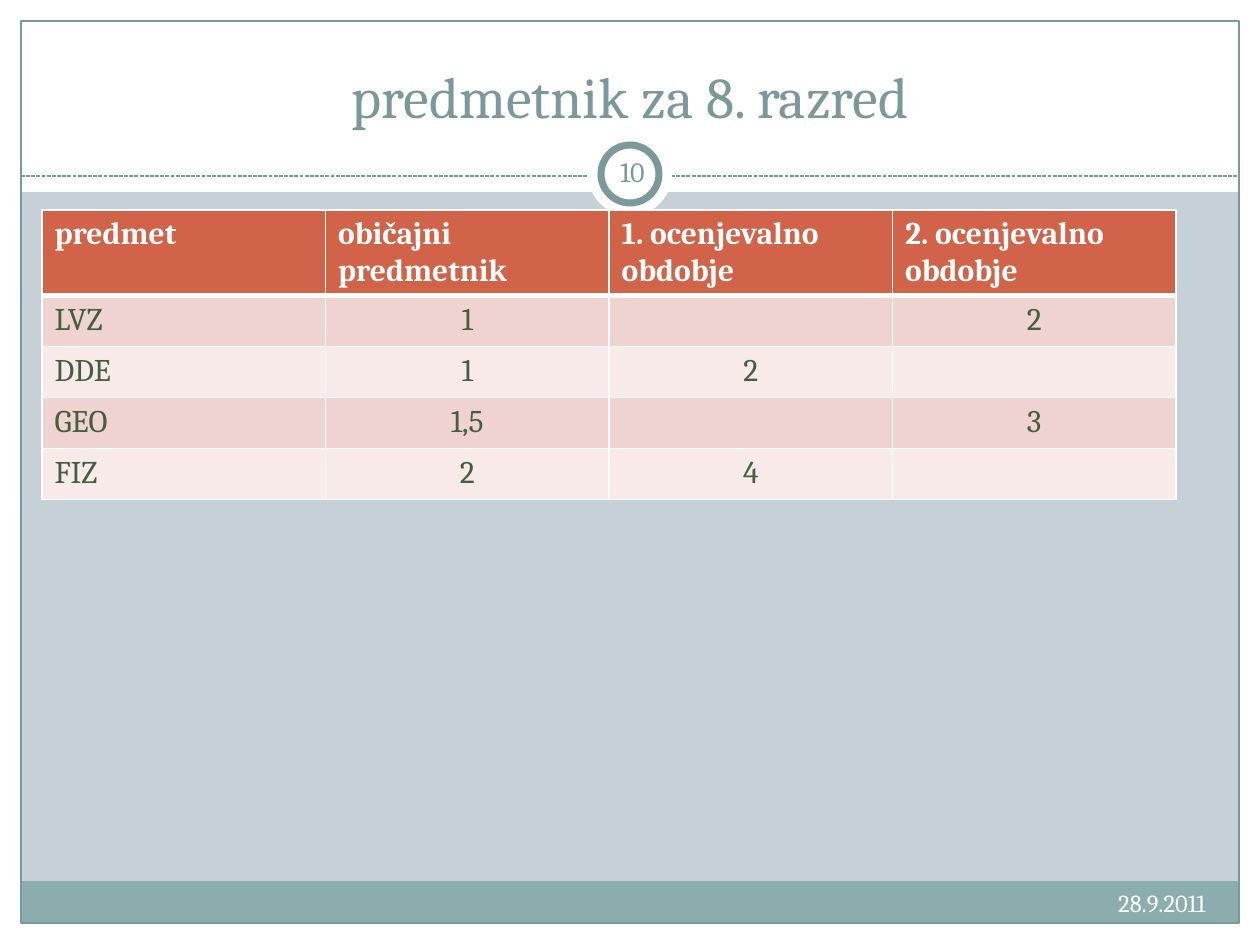
"""Build the timetable slide for the 8th grade."""
from lxml.etree import SubElement
from pptx import Presentation
from pptx.dml.color import RGBColor
from pptx.enum.dml import MSO_LINE
from pptx.enum.shapes import MSO_CONNECTOR, MSO_SHAPE
from pptx.enum.text import MSO_ANCHOR, MSO_AUTO_SIZE, PP_ALIGN
from pptx.oxml.ns import qn
from pptx.util import Emu, Pt

TITLE = "predmetnik za 8. razred"
DATE = "28.9.2011"
PAGE_NUMBER = "10"
HEADINGS = ["predmet", "običajni predmetnik", "1. ocenjevalno obdobje", "2. ocenjevalno obdobje"]
SUBJECTS = [
    ["LVZ", "1", "", "2"],
    ["DDE", "1", "2", ""],
    ["GEO", "1,5", "", "3"],
    ["FIZ", "2", "4", ""],
]

FONT = "Cambria"
WHITE = RGBColor(0xFF, 0xFF, 0xFF)
BACKDROP = RGBColor(0xC5, 0xD1, 0xD7)
TEAL = RGBColor(0x7C, 0x99, 0x9A)
FOOTER_TEAL = RGBColor(0x8C, 0xAD, 0xAE)
HEADER_RED = RGBColor(0xD1, 0x63, 0x49)
BANDS = [RGBColor(0xEE, 0xD3, 0xD0), RGBColor(0xF7, 0xEA, 0xE9)]
GREEN = RGBColor(0x43, 0x5E, 0x40)

WIDTH, HEIGHT, MARGIN = 1260, 945, 21
TABLE_LEFT, TABLE_TOP = 42, 210
COLUMN_WIDTH, HEADER_HEIGHT, ROW_HEIGHT = 283.5, 84, 51
DIVIDER_Y = 176


def px(length):
    return Emu(round(length * 914400 / 126))


def add_plain(slide, box, fill=None, line=None, weight=0.75, kind=MSO_SHAPE.RECTANGLE):
    shape = slide.shapes.add_shape(kind, *map(px, box))
    shape.shadow.inherit = False
    if fill is None:
        shape.fill.background()
    else:
        shape.fill.solid()
        shape.fill.fore_color.rgb = fill
    if line is None:
        shape.line.fill.background()
    else:
        shape.line.color.rgb = line
        shape.line.width = Pt(weight)


def format_text(frame, size, color, align, bold=False):
    paragraph = frame.paragraphs[0]
    paragraph.alignment = align
    paragraph.font.name = FONT
    paragraph.font.size = Pt(size)
    paragraph.font.bold = bold
    paragraph.font.color.rgb = color


def add_label(slide, box, text, size, color, align, anchor, inset=None):
    frame = slide.shapes.add_textbox(*map(px, box)).text_frame
    frame.word_wrap = True
    frame.vertical_anchor = anchor
    if inset is not None:
        frame.margin_left = frame.margin_right = px(inset)
        frame.margin_top = frame.margin_bottom = px(inset)
    frame.text = text
    format_text(frame, size, color, align)


def add_frame(slide):
    for box in [
        (0, 924, WIDTH, MARGIN),
        (0, 0, WIDTH, 192),
        (0, 0, MARGIN, HEIGHT),
        (WIDTH - MARGIN, 0, MARGIN, HEIGHT),
    ]:
        add_plain(slide, box, WHITE)
    add_plain(slide, (MARGIN, 881, WIDTH - 2 * MARGIN, 43), FOOTER_TEAL)
    add_plain(slide, (MARGIN, MARGIN, WIDTH - 2 * MARGIN, 902), line=TEAL)
    divider = slide.shapes.add_connector(
        MSO_CONNECTOR.STRAIGHT, px(MARGIN), px(DIVIDER_Y), px(WIDTH - MARGIN), px(DIVIDER_Y)
    )
    divider.line.color.rgb = TEAL
    divider.line.width = Pt(0.75)
    divider.line.dash_style = MSO_LINE.SQUARE_DOT
    SubElement(divider._element.spPr, qn("a:effectLst"))
    add_plain(slide, (588, 132, 84, 84), WHITE, kind=MSO_SHAPE.OVAL)
    add_plain(slide, (601, 145, 58, 58), WHITE, TEAL, 4, MSO_SHAPE.OVAL)


def add_borders(cell, top, bottom):
    properties = cell._tc.get_or_add_tcPr()
    for side, weight in (("L", 1), ("R", 1), ("T", top), ("B", bottom)):
        border = SubElement(properties, qn(f"a:ln{side}"), w=str(Pt(weight)))
        SubElement(SubElement(border, qn("a:solidFill")), qn("a:srgbClr"), val=str(WHITE))


def add_timetable(slide):
    rows = [HEADINGS, *SUBJECTS]
    heights = [HEADER_HEIGHT] + [ROW_HEIGHT] * len(SUBJECTS)
    timetable = slide.shapes.add_table(
        len(rows), len(HEADINGS), px(TABLE_LEFT), px(TABLE_TOP),
        px(COLUMN_WIDTH * len(HEADINGS)), px(sum(heights)),
    ).table
    for column in timetable.columns:
        column.width = px(COLUMN_WIDTH)
    for r, (texts, height) in enumerate(zip(rows, heights)):
        timetable.rows[r].height = px(height)
        header = r == 0
        for c, text in enumerate(texts):
            cell = timetable.cell(r, c)
            add_borders(cell, 3 if r == 1 else 1, 3 if header else 1)
            cell.fill.solid()
            cell.fill.fore_color.rgb = HEADER_RED if header else BANDS[(r - 1) % 2]
            cell.text = text
            align = PP_ALIGN.LEFT if header or c == 0 else PP_ALIGN.CENTER
            format_text(cell.text_frame, 18, WHITE if header else GREEN, align, header)


def main():
    deck = Presentation()
    deck.slide_width, deck.slide_height = px(WIDTH), px(HEIGHT)
    slide = deck.slides.add_slide(deck.slide_layouts[5])
    slide.background.fill.solid()
    slide.background.fill.fore_color.rgb = BACKDROP
    add_frame(slide)

    title = slide.shapes.title
    slide.shapes._spTree.append(title._element)
    title.left, title.top, title.width, title.height = map(px, (42, 32, 1176, 104))
    title.text_frame.text = TITLE
    title.text_frame.auto_size = MSO_AUTO_SIZE.NONE
    title.text_frame.vertical_anchor = MSO_ANCHOR.BOTTOM
    format_text(title.text_frame, 33, TEAL, PP_ALIGN.CENTER)

    add_timetable(slide)
    add_label(slide, (798, 882, 420, 50), DATE, 14, WHITE, PP_ALIGN.RIGHT, MSO_ANCHOR.TOP)
    add_label(slide, (601, 141, 63, 60), PAGE_NUMBER, 16, TEAL, PP_ALIGN.CENTER, MSO_ANCHOR.MIDDLE, 6)
    deck.save("out.pptx")


if __name__ == "__main__":
    main()
